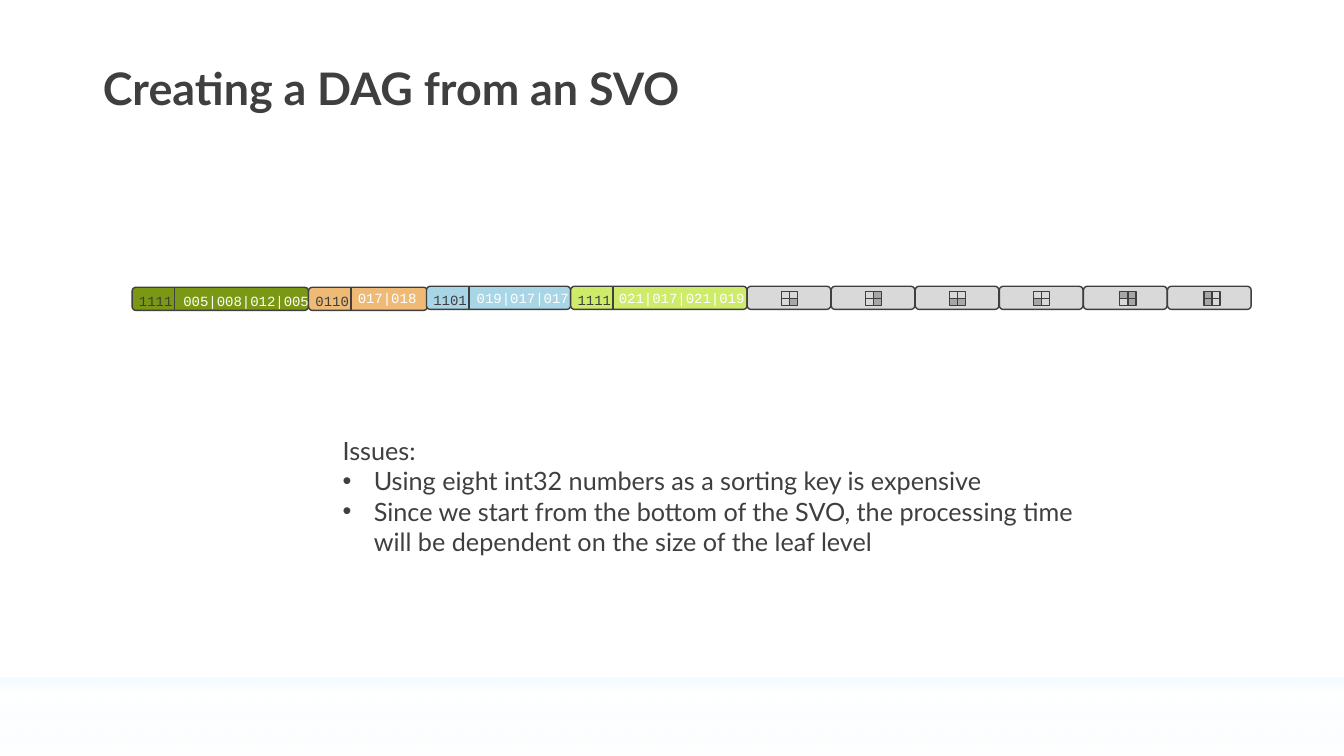
"""Builds the slide on creating a DAG from an SVO."""
from dataclasses import dataclass

from lxml import etree
from pptx import Presentation
from pptx.dml.color import RGBColor
from pptx.enum import shapes, text
from pptx.oxml import ns
from pptx.util import Inches, Pt


@dataclass(frozen=True)
class Theme:
    """Colours, fonts and sizes of the slide."""
    ink: str = "3F3F3F"
    white: str = "FFFFFF"
    leaf: str = "D9D9D9"
    cell: str = "A6A6A6"
    sans: str = "Lato"
    mono: str = "Courier New"
    title: int = 32
    body: int = 18
    code: int = 10
    line: int = 1
    band: tuple = ((0, "F0FCFF", 100), (24, "FFFFFF", 13), (100, "A6EBFF", 0))


class Deck:
    """Holds the theme and the current slide and draws its elements."""

    def __init__(self, theme):
        """Starts a presentation with one title-only slide."""
        self.t = theme
        self.prs = Presentation()
        self.prs.slide_width, self.prs.slide_height = Inches(13.33), Inches(7.5)
        self.s = self.prs.slides.add_slide(self.prs.slide_layouts[5])

    def style(self, p, font, size, color, bold=False):
        """Formats every run of a paragraph."""
        for r in p.runs:
            r.font.name, r.font.size, r.font.bold = font, Pt(size), bold
            r.font.color.rgb = RGBColor.from_string(color)

    def band(self, *box):
        """Draws the fading band at the foot of the slide."""
        sp = self.s.shapes.add_shape(shapes.MSO_SHAPE.RECTANGLE, *map(Inches, box))
        sp.shadow.inherit = False
        sp.line.fill.background()
        sp.fill.gradient()
        sp.fill.gradient_angle = 270
        stops = sp.element.find(".//" + ns.qn("a:gsLst"))
        for gs in list(stops):
            stops.remove(gs)
        for pos, color, alpha in self.t.band:
            gs = etree.SubElement(stops, ns.qn("a:gs"), pos=str(pos * 1000))
            clr = etree.SubElement(gs, ns.qn("a:srgbClr"), val=color)
            etree.SubElement(clr, ns.qn("a:alpha"), val=str(alpha * 1000))

    def title(self, words, *box):
        """Places and formats the title placeholder."""
        sp = self.s.shapes.title
        sp.left, sp.top, sp.width, sp.height = map(Inches, box)
        tf = sp.text_frame
        tf.text = words
        tf.vertical_anchor = text.MSO_ANCHOR.MIDDLE
        p = tf.paragraphs[0]
        p.alignment, p.line_spacing = text.PP_ALIGN.LEFT, 0.9
        self.style(p, self.t.sans, self.t.title, self.t.ink, True)

    def box(self, parent, kind, fill, *box):
        """Draws an outlined shape, filled when a colour is given."""
        sp = parent.shapes.add_shape(kind, *map(Inches, box))
        sp.shadow.inherit = False
        sp.line.color.rgb = RGBColor.from_string(self.t.ink)
        sp.line.width = Pt(self.t.line)
        if fill:
            sp.fill.solid()
            sp.fill.fore_color.rgb = RGBColor.from_string(fill)
        else:
            sp.fill.background()

    def code(self, parent, words, color, x, y):
        """Writes a line of monospaced text in a box as wide as its words."""
        width = 0.22 + 0.09 * len(words)
        tf = parent.shapes.add_textbox(*map(Inches, (x, y, width, 0.26))).text_frame
        tf.word_wrap = False
        tf.text = words
        self.style(tf.paragraphs[0], self.t.mono, self.t.code, color)

    def divider(self, parent, x, top, bottom):
        """Draws a vertical line."""
        ln = parent.shapes.add_connector(
            shapes.MSO_CONNECTOR.STRAIGHT, *map(Inches, (x, top, x, bottom)))
        ln.line.color.rgb = RGBColor.from_string(self.t.ink)
        ln.line.width = Pt(self.t.line)
        etree.SubElement(ln.element.spPr, ns.qn("a:effectLst"))

    def node(self, x, y, width, fill, mask, pointers, px, py):
        """Draws an inner node: child mask, divider and pointers."""
        g = self.s.shapes.add_group_shape()
        self.box(g, shapes.MSO_SHAPE.ROUNDED_RECTANGLE, fill, x, y, width, 0.23)
        self.code(g, mask, self.t.ink, x - 0.03, y)
        self.code(g, pointers, self.t.white, px, py)
        self.divider(g, x + 0.42, y, y + 0.23)

    def leaf(self, x, y, inset, mask):
        """Draws a leaf node with its two by two grid of voxels."""
        g = self.s.shapes.add_group_shape()
        self.box(g, shapes.MSO_SHAPE.ROUNDED_RECTANGLE, self.t.leaf, x, y, 0.83, 0.23)
        for i, bit in enumerate(mask):
            row, col = divmod(i, 2)
            self.box(g, shapes.MSO_SHAPE.RECTANGLE, self.t.cell if bit == "1" else None,
                     x + inset + col * 0.08, 2.89 + row * 0.07, 0.08, 0.07)

    def issues(self, heading, bullets, *box):
        """Writes a heading followed by bullets."""
        tf = self.s.shapes.add_textbox(*map(Inches, box)).text_frame
        tf.word_wrap = False
        tf.text = heading
        for words in bullets:
            p = tf.add_paragraph()
            p.text = words
            pPr = p._p.get_or_add_pPr()
            pPr.set("marL", str(Inches(0.31)))
            pPr.set("indent", str(-Inches(0.31)))
            etree.SubElement(pPr, ns.qn("a:buFont"), typeface="Arial")
            etree.SubElement(pPr, ns.qn("a:buChar"), char="•")
        for p in tf.paragraphs:
            self.style(p, self.t.sans, self.t.body, self.t.ink)


NODES = [
    (1.31, 2.85, 1.75, "7A9813", "1111", "005|008|012|005", 1.72, 2.85),
    (3.06, 2.85, 1.18, "EEBA75", "0110", "017|018", 3.45, 2.82),
    (4.23, 2.84, 1.43, "A8D6E6", "1101", "019|017|017", 4.63, 2.82),
    (5.66, 2.84, 1.75, "CEEC69", "1111", "021|017|021|019", 6.04, 2.82),
]
LEAVES = [(0.34, "0001"), (0.34, "0101"), (0.34, "0011"),
          (0.34, "0010"), (0.36, "1101"), (0.36, "1010")]
ISSUES = [
    "Using eight int32 numbers as a sorting key is expensive",
    "Since we start from the bottom of the SVO, the processing time\v"
    "will be dependent on the size of the leaf level",
]


def main():
    """Draws the slide and saves it."""
    deck = Deck(Theme())
    deck.band(0, 6.72, 13.33, 0.78)
    deck.title("Creating a DAG from an SVO", 0.92, 0.4, 11.5, 1.01)
    for node in NODES:
        deck.node(*node)
    pitch = (11.58 - 7.41) / (len(LEAVES) - 1)
    for i, (inset, mask) in enumerate(LEAVES):
        deck.leaf(7.41 + i * pitch, 2.84, inset, mask)
    deck.issues("Issues:", ISSUES, 3.3, 4.27, 7.86, 1.62)
    deck.prs.save("out.pptx")


if __name__ == "__main__":
    main()
